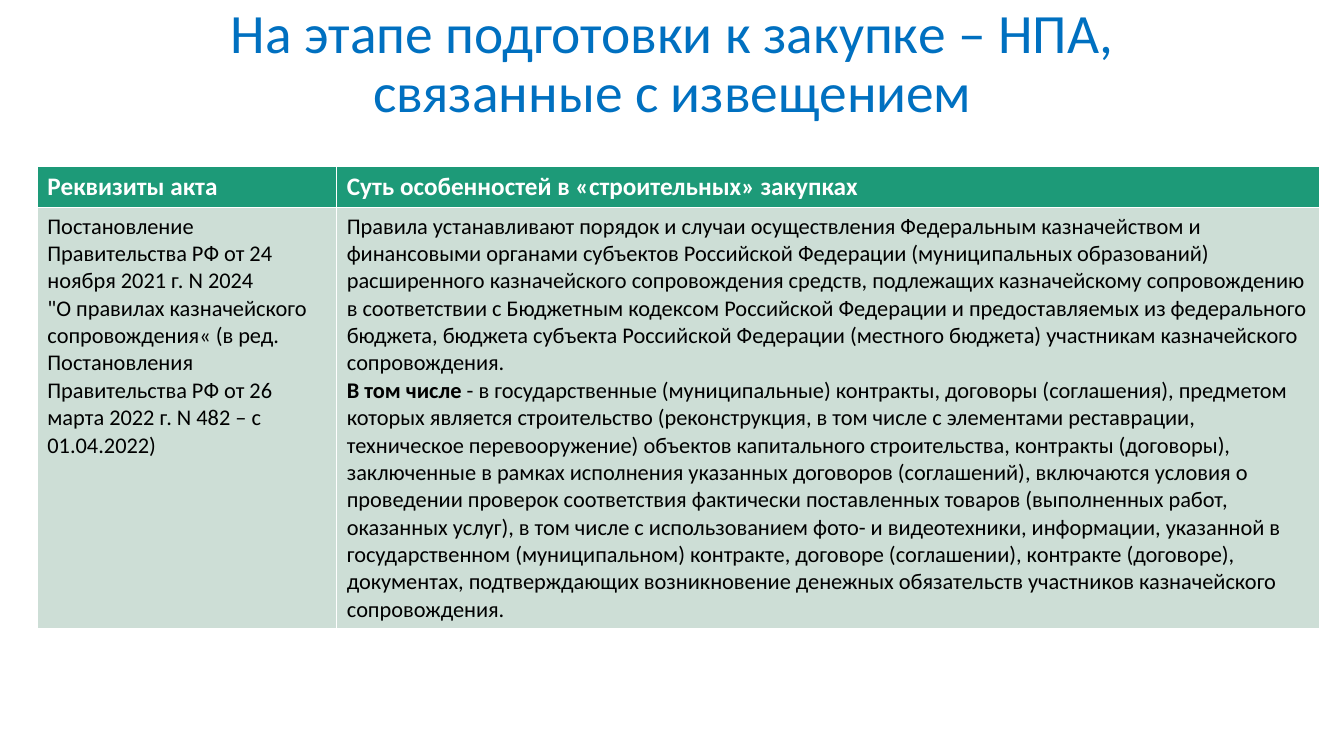
from pptx import Presentation
from pptx.dml.color import RGBColor
from pptx.enum.text import MSO_ANCHOR, PP_ALIGN
from pptx.util import Inches, Pt

HEADINGS = ["Реквизиты акта", "Суть особенностей в «строительных» закупках"]

# Each cell is a list of paragraphs, each paragraph a list of (text, bold) runs
ACT = [
    [("Постановление Правительства РФ от 24 ноября 2021 г. N 2024", False)],
    [('"О правилах казначейского сопровождения« (в ред. Постановления '
      "Правительства РФ от 26 марта 2022 г. N 482 – с 01.04.2022)", False)],
]
ESSENCE = [
    [("Правила устанавливают порядок и случаи осуществления Федеральным "
      "казначейством и финансовыми органами субъектов Российской Федерации "
      "(муниципальных образований) расширенного казначейского сопровождения "
      "средств, подлежащих казначейскому сопровождению в соответствии с "
      "Бюджетным кодексом Российской Федерации и предоставляемых из "
      "федерального бюджета, бюджета субъекта Российской Федерации (местного "
      "бюджета) участникам казначейского сопровождения.", False)],
    [("В том числе ", True),
     ("- в государственные (муниципальные) контракты, договоры (соглашения), "
      "предметом которых является строительство (реконструкция, в том числе с "
      "элементами реставрации, техническое перевооружение) объектов "
      "капитального строительства, контракты (договоры), заключенные в рамках "
      "исполнения указанных договоров (соглашений), включаются условия о "
      "проведении проверок соответствия фактически поставленных товаров "
      "(выполненных работ, оказанных услуг), в том числе с использованием "
      "фото- и видеотехники, информации, указанной в государственном "
      "(муниципальном) контракте, договоре (соглашении), контракте (договоре), "
      "документах, подтверждающих возникновение денежных обязательств "
      "участников казначейского сопровождения.", False)],
]


def color(hex_code):
    return RGBColor.from_string(hex_code)


class SlideBuilder:
    FONT = "Calibri"
    TITLE, WHITE, BLACK = "0070C0", "FFFFFF", "000000"
    HEADER_FILL, BODY_FILL = "1D9A78", "CDDED6"

    def __init__(self, presentation):
        self.slide = presentation.slides.add_slide(presentation.slide_layouts[5])

    def style(self, paragraph, size, hex_code):
        paragraph.font.name = self.FONT
        paragraph.font.size = Pt(size)
        paragraph.font.color.rgb = color(hex_code)

    def title(self, text, left, top, width, height):
        heading = self.slide.shapes.title
        heading.left, heading.top = Inches(left), Inches(top)
        heading.width, heading.height = Inches(width), Inches(height)
        frame = heading.text_frame
        frame.text = text
        frame.word_wrap = True
        frame.vertical_anchor = MSO_ANCHOR.MIDDLE
        frame.margin_left = frame.margin_right = Inches(0.3)
        paragraph = frame.paragraphs[0]
        paragraph.alignment = PP_ALIGN.CENTER
        paragraph.line_spacing = 0.9
        self.style(paragraph, 39.6, self.TITLE)

    def cell(self, cell, paragraphs, fill, size, hex_code):
        cell.fill.solid()
        cell.fill.fore_color.rgb = color(fill)
        frame = cell.text_frame
        for index, runs in enumerate(paragraphs):
            paragraph = frame.add_paragraph() if index else frame.paragraphs[0]
            self.style(paragraph, size, hex_code)
            for text, bold in runs:
                run = paragraph.add_run()
                run.text = text
                run.font.bold = bold

    def table(self, headings, body, left, top, widths, heights):
        acts = self.slide.shapes.add_table(
            len(heights), len(widths), Inches(left), Inches(top),
            Inches(sum(widths)), Inches(sum(heights))).table
        for column, width in zip(acts.columns, widths):
            column.width = Inches(width)
        for row, height in zip(acts.rows, heights):
            row.height = Inches(height)
        for index, (heading, content) in enumerate(zip(headings, body)):
            self.cell(acts.cell(0, index), [[(heading, True)]],
                      self.HEADER_FILL, 18, self.WHITE)
            self.cell(acts.cell(1, index), content,
                      self.BODY_FILL, 16, self.BLACK)


def main():
    presentation = Presentation()
    presentation.slide_width = Inches(13.33)
    presentation.slide_height = Inches(7.5)
    builder = SlideBuilder(presentation)

    # Title
    builder.title("На этапе подготовки к закупке – НПА, связанные с извещением",
                  0.92, 0.4, 11.5, 0.49)

    # Legal acts; the white rules come from the default table style
    builder.table(HEADINGS, [ACT, ESSENCE], 0.37, 1.65, [2.97, 9.75], [0.41, 4.1])

    presentation.save("out.pptx")


if __name__ == "__main__":
    main()
